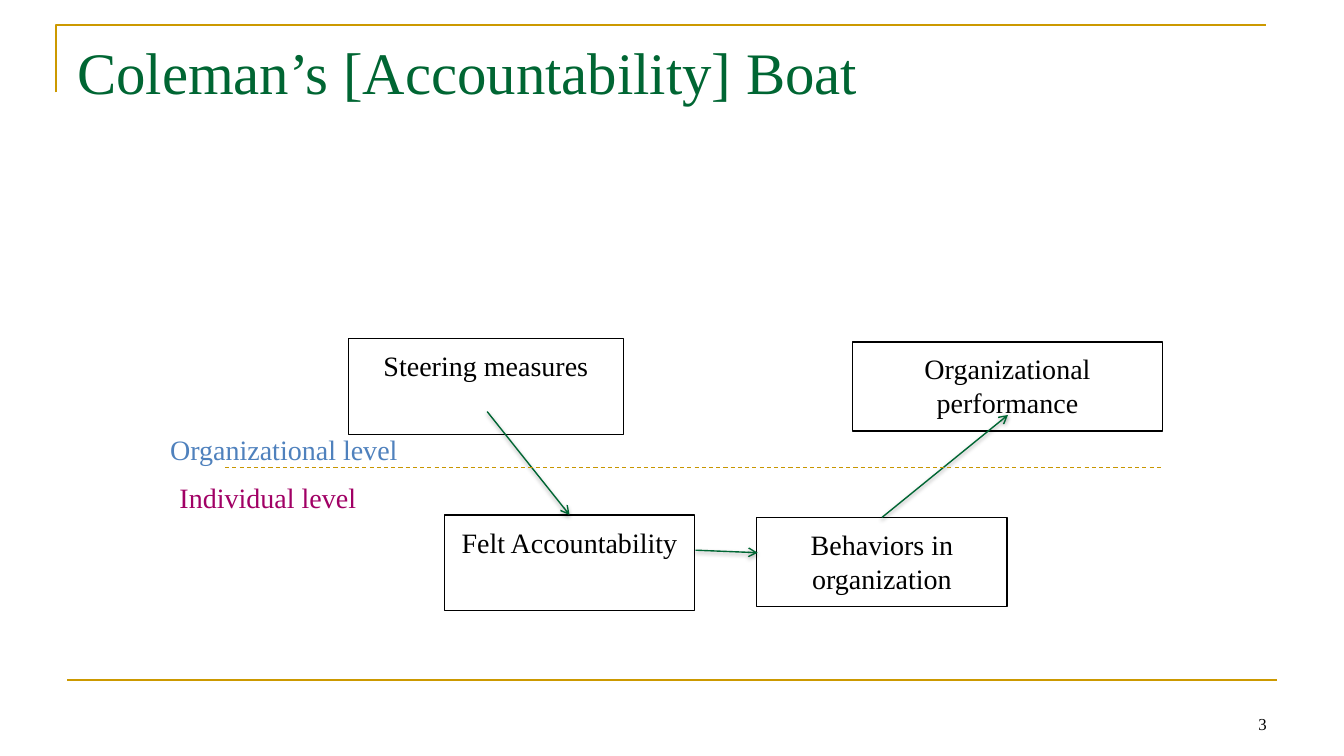
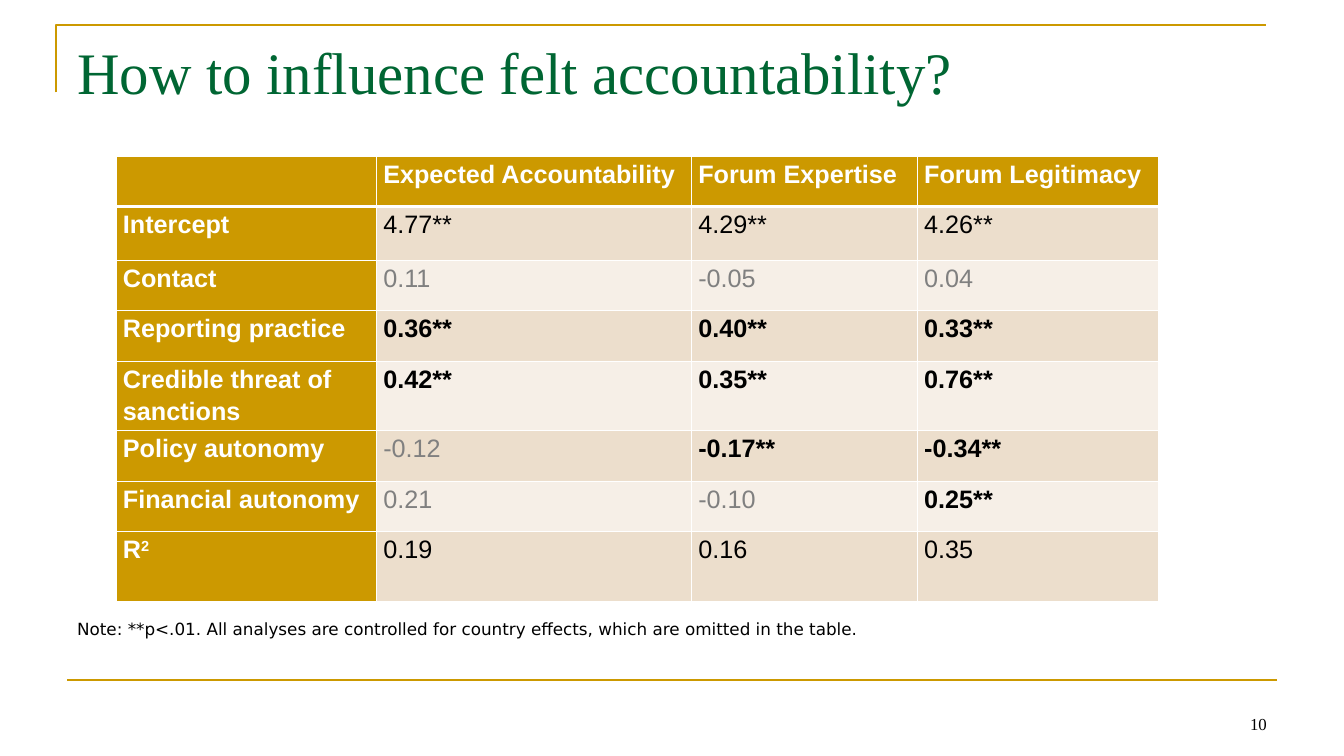
from lxml.etree import SubElement
from pptx import Presentation
from pptx.dml.color import RGBColor
from pptx.enum.dml import MSO_LINE
from pptx.enum.shapes import MSO_CONNECTOR, MSO_SHAPE
from pptx.enum.text import MSO_ANCHOR, MSO_AUTO_SIZE, PP_ALIGN
from pptx.oxml import parse_xml
from pptx.oxml.ns import nsdecls, qn
from pptx.util import Inches, Pt

GOLD = RGBColor(0xCC, 0x99, 0x00)
OCHRE = RGBColor(0xC8, 0x96, 0x00)
GREEN = RGBColor(0x00, 0x66, 0x33)
BLUE = RGBColor(0x4F, 0x81, 0xBD)
PLUM = RGBColor(0xA1, 0x00, 0x65)
BLACK = RGBColor(0x00, 0x00, 0x00)
WHITE = RGBColor(0xFF, 0xFF, 0xFF)
GREY = RGBColor(0x80, 0x80, 0x80)
SAND = RGBColor(0xEC, 0xDE, 0xCC)
CREAM = RGBColor(0xF6, 0xEF, 0xE7)
SERIF, SANS, NOTE = "Times New Roman", "Arial", "DejaVu Sans"
COLS, ROWS = 160, 90

deck = Presentation()
deck.slide_width = Inches(40 / 3)
deck.slide_height = Inches(7.5)
UNIT = deck.slide_width // COLS


def grid(*spots):
    return [round(spot * UNIT) for spot in spots]


def style(frame, size, face, color, align=PP_ALIGN.LEFT, bold=False):
    frame.word_wrap = True
    for para in frame.paragraphs:
        para.alignment = align
        for run in para.runs:
            run.font.size = Pt(size)
            run.font.name = face
            run.font.color.rgb = color
            run.font.bold = bold


layout = deck.slide_layouts[5]
for holder in list(layout.placeholders)[1:]:
    holder.element.getparent().remove(holder.element)

boat = deck.slides.add_slide(layout)
bend = boat.shapes.build_freeform(*grid(6.7, 11), scale=1.0)
bend.add_line_segments([grid(6.7, 3), grid(150.7, 3)], close=False)
bend = bend.convert_to_shape()
bend.shadow.inherit = False
bend.fill.background()
rule = boat.shapes.add_connector(MSO_CONNECTOR.STRAIGHT, *grid(8, 81, 152, 81))
SubElement(rule.element.spPr, qn("a:effectLst"))
for band in (bend, rule):
    band.line.color.rgb = GOLD
    band.line.width = Pt(1.5)
    layout.shapes.element.append(band.element)

sheet = deck.slides.add_slide(layout)
for slide, head, page in (
    (boat, "Coleman’s [Accountability] Boat", "3"),
    (sheet, "How to influence felt accountability?", "10"),
):
    title = slide.shapes.title
    title.left, title.top, title.width, title.height = grid(8, 3.6, 144, 15)
    title.text_frame.text = head
    title.text_frame.auto_size = MSO_AUTO_SIZE.NONE
    title.text_frame.vertical_anchor = MSO_ANCHOR.TOP
    style(title.text_frame, 42, SERIF, GREEN)
    frame = slide.shapes.add_textbox(*grid(114.7, 82, 37.3, 6)).text_frame
    frame.text = page
    frame.vertical_anchor = MSO_ANCHOR.BOTTOM
    style(frame, 12, SERIF, BLACK, PP_ALIGN.RIGHT)

boxes = []
for text, spot in (
    ("Felt Accountability", (52.9, 61.3, 29.8, 11.4)),
    ("Steering measures", (41.5, 40.3, 32.7, 11.4)),
    ("Behaviors in organization", (90.1, 61.6, 29.8, 10.6)),
    ("Organizational performance", (101.5, 40.7, 36.9, 10.6)),
):
    box = boat.shapes.add_shape(MSO_SHAPE.RECTANGLE, *grid(*spot))
    box.shadow.inherit = False
    box.fill.solid()
    box.fill.fore_color.rgb = WHITE
    box.line.color.rgb = BLACK
    box.line.width = Pt(1)
    frame = box.text_frame
    frame.text = text
    frame.vertical_anchor = MSO_ANCHOR.TOP
    frame.margin_left = frame.margin_right = Inches(0.16)
    frame.margin_top = frame.margin_bottom = Inches(0.1)
    style(frame, 20, SERIF, BLACK, PP_ALIGN.CENTER)
    boxes.append(box)
felt, steer, act, result = boxes

arrows = []
for spot in (
    (82.8, 65.5, 90.2, 65.8),
    (58, 49, 67.8, 61.3),
    (105, 61.6, 120, 49.4),
):
    arrow = boat.shapes.add_connector(MSO_CONNECTOR.STRAIGHT, *grid(*spot))
    arrow.line.color.rgb = GREEN
    arrow.line.width = Pt(1)
    SubElement(arrow.line._get_or_add_ln(), qn("a:tailEnd"), type="arrow")
    arrow.element.spPr.append(parse_xml(
        f'<a:effectLst {nsdecls("a")}>'
        '<a:outerShdw blurRad="39370" dist="20320" dir="5400000" rotWithShape="0">'
        '<a:srgbClr val="000000"><a:alpha val="38000"/></a:srgbClr>'
        '</a:outerShdw></a:effectLst>'))
    arrows.append(arrow)
arrows[1].end_connect(felt, 0)
arrows[2].begin_connect(act, 0)

for text, color, spot in (
    ("Individual level", PLUM, (13.3, 57.2, 37.2, 4.1)),
    ("Organizational level", BLUE, (9, 51.5, 49.6, 4.1)),
):
    frame = boat.shapes.add_textbox(*grid(*spot)).text_frame
    frame.text = text
    frame.margin_left = frame.margin_right = 0
    frame.margin_top = frame.margin_bottom = 0
    style(frame, 20, SERIF, color, PP_ALIGN.CENTER)

split = boat.shapes.add_connector(MSO_CONNECTOR.STRAIGHT, *grid(26.8, 55.7, 138.4, 55.7))
split.line.color.rgb = OCHRE
split.line.width = Pt(0.75)
split.line.dash_style = MSO_LINE.DASH
SubElement(split.element.spPr, qn("a:effectLst"))

frame = sheet.shapes.add_textbox(*grid(8, 73, 98, 3.6)).text_frame
frame.text = ("Note: **p<.01. All analyses are controlled for country effects, "
              "which are omitted in the table.")
frame.vertical_anchor = MSO_ANCHOR.MIDDLE
style(frame, 12, NOTE, BLACK)

data = (
    ("", "Expected Accountability", "Forum Expertise", "Forum Legitimacy"),
    ("Intercept", "4.77**", "4.29**", "4.26**"),
    ("Contact", "0.11", "-0.05", "0.04"),
    ("Reporting practice", "0.36**", "0.40**", "0.33**"),
    ("Credible threat of sanctions", "0.42**", "0.35**", "0.76**"),
    ("Policy autonomy", "-0.12", "-0.17**", "-0.34**"),
    ("Financial autonomy", "0.21", "-0.10", "0.25**"),
    ("R", "0.19", "0.16", "0.35"),
)
wide = grid(31, 37.5, 26.9, 28.7)
tall = grid(6, 6.4, 6, 6, 8.3, 6, 6, 8.3)
table = sheet.shapes.add_table(
    len(tall), len(wide), *grid(13.8, 18.6), sum(wide), sum(tall)).table
for col, width in zip(table.columns, wide):
    col.width = width
for row, height in zip(table.rows, tall):
    row.height = height

last = len(data) - 1
for r, line in enumerate(data):
    for c, text in enumerate(line):
        cell = table.cell(r, c)
        for side in "LRTB":
            thick = (r, side) in ((0, "B"), (1, "T"))
            cell._tc.get_or_add_tcPr().append(parse_xml(
                f'<a:ln{side} {nsdecls("a")} w="{Pt(3 if thick else 1)}">'
                f'<a:solidFill><a:srgbClr val="{WHITE}"/></a:solidFill></a:ln{side}>'))
        label = r == 0 or c == 0
        plain = r in (1, last)
        strong = text.endswith("**")
        cell.fill.solid()
        cell.fill.fore_color.rgb = GOLD if label else SAND if r % 2 else CREAM
        cell.margin_left = cell.margin_right = Inches(0.07)
        cell.margin_top = cell.margin_bottom = 0
        para = cell.text_frame.paragraphs[0]
        para.text = text
        para.line_spacing = 1.15
        if (r, c) == (last, 0):
            power = para.add_run()
            power.text = "2"
            power.font._element.set("baseline", "30000")
        color = WHITE if label else BLACK if plain or strong else GREY
        style(cell.text_frame, 18, SANS, color, bold=label or strong and not plain)

deck.save("out.pptx")
